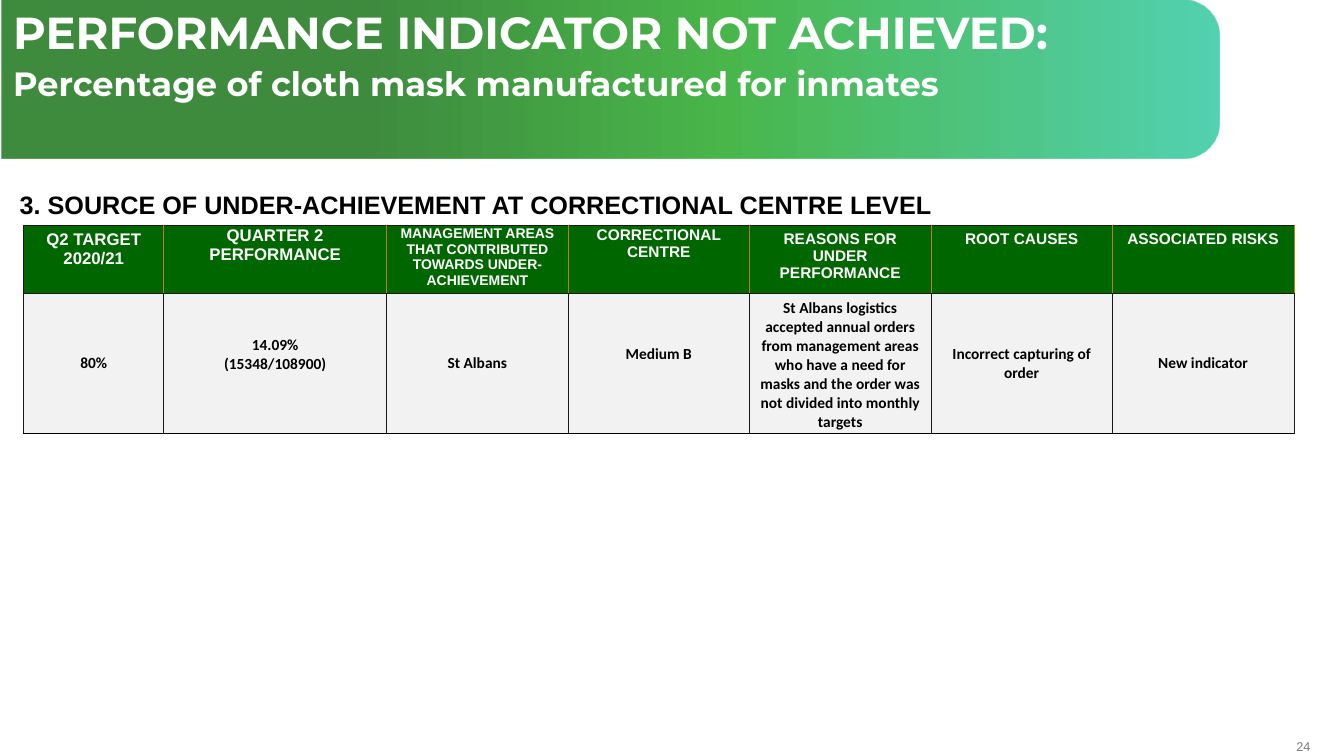
from dataclasses import dataclass

from lxml.etree import SubElement
from pptx import Presentation
from pptx.dml.color import RGBColor
from pptx.enum.shapes import MSO_SHAPE as Shape
from pptx.enum.text import MSO_ANCHOR as Anchor, MSO_AUTO_SIZE as AutoSize, PP_ALIGN as Align
from pptx.oxml.ns import qn
from pptx.util import Pt


@dataclass(frozen=True)
class Theme:
    title_font: str = "Montserrat"
    heading_font: str = "Arial"
    body_font: str = "Calibri"
    white: str = "FFFFFF"
    black: str = "000000"
    header_fill: str = "006600"
    body_fill: str = "F2F2F2"
    dark_border: str = "1E1918"
    accent_border: str = "BF7B17"
    page_number: str = "77787B"
    # position %, colour, opacity %
    band_stops: tuple = ((30, "006600", 75), (59, "009900", 71), (100, "00BC8D", 67))
    title_size: int = 32
    subtitle_size: int = 24
    heading_size: int = 18
    body_size: int = 11
    number_size: int = 9


THEME = Theme()

COLUMN_WIDTHS = [100, 159.2] + [129.6] * 5
ROW_HEIGHTS = [49, 100]
TIGHT = dict(margin_left=Pt(0.7), margin_top=Pt(0.7), margin_right=Pt(0.7), margin_bottom=0)
RAISED = dict(margin_bottom=Pt(17))

# text, type size, cell margins
HEADERS = [
    ("Q2 TARGET 2020/21", 12, {}),
    ("QUARTER 2\nPERFORMANCE", 12, TIGHT),
    ("MANAGEMENT AREAS THAT CONTRIBUTED TOWARDS UNDER-ACHIEVEMENT", 10, TIGHT),
    ("CORRECTIONAL CENTRE", 11, TIGHT),
    ("REASONS FOR UNDER\nPERFORMANCE", 11, {}),
    ("ROOT CAUSES", 11, {}),
    ("ASSOCIATED RISKS", 11, {}),
]
# text, cell margins
RESULTS = [
    ("80%", {}),
    ("14.09%\n(15348/108900)", RAISED),
    ("St Albans", {}),
    ("Medium B", RAISED),
    ("St Albans logistics accepted annual orders from management areas who have "
     "a need for masks and the order was not divided into monthly targets", {}),
    ("Incorrect capturing of order", {}),
    ("New indicator", {}),
]


def apply_format(target, values):
    for name, value in values.items():
        setattr(target, name, value)


def write_lines(frame, lines, font, color, sizes, bold=True, **paragraph_format):
    """Write one paragraph per line, each with its own type size."""
    for index, (line, size) in enumerate(zip(lines, sizes)):
        paragraph = frame.add_paragraph() if index else frame.paragraphs[0]
        apply_format(paragraph, paragraph_format)
        run = paragraph.add_run()
        run.text = line
        apply_format(run.font, dict(name=font, size=Pt(size), bold=bold))
        run.font.color.rgb = RGBColor.from_string(color)


def add_band(slide, left, top, length, depth):
    """Upright tab turned by 90 degrees, so its round corners face right."""
    offset = (length - depth) / 2
    band = slide.shapes.add_shape(Shape.ROUND_2_SAME_RECTANGLE, Pt(left + offset),
                                  Pt(top - offset), Pt(depth), Pt(length))
    band.rotation = 90
    band.adjustments[0] = 0.233
    band.adjustments[1] = 0
    band.shadow.inherit = False
    band.line.fill.background()
    band.fill.gradient()
    band.fill.gradient_angle = 90
    stops = band.element.spPr.find(".//" + qn("a:gsLst"))
    for stop in list(stops):
        stops.remove(stop)
    for position, color, opacity in THEME.band_stops:
        stop = SubElement(stops, qn("a:gs"), pos=str(position * 1000))
        color_element = SubElement(stop, qn("a:srgbClr"), val=color)
        SubElement(color_element, qn("a:alpha"), val=str(opacity * 1000))


def add_title(slide, title, subtitle):
    shape = slide.shapes.title
    apply_format(shape, dict(left=Pt(2.2), top=Pt(4.3), width=Pt(862.6), height=Pt(41)))
    frame = shape.text_frame
    apply_format(frame, dict(word_wrap=True, auto_size=AutoSize.NONE,
                             vertical_anchor=Anchor.TOP))
    write_lines(frame, [title, subtitle], THEME.title_font, THEME.white,
                [THEME.title_size, THEME.subtitle_size], alignment=Align.LEFT,
                line_spacing=0.9, space_after=Pt(6))


def add_text(slide, text, box, size, color, bold, align, frame_format):
    frame = slide.shapes.add_textbox(*map(Pt, box)).text_frame
    apply_format(frame, dict(word_wrap=True, **frame_format))
    write_lines(frame, [text], THEME.heading_font, color, [size], bold, alignment=align)


def set_borders(cell, borders):
    """Borders map a side (L, R, T, B) to its colour and width in points."""
    properties = cell._tc.get_or_add_tcPr()
    for side, (color, width) in borders.items():
        line = SubElement(properties, qn("a:ln" + side), w=str(Pt(width)))
        fill = SubElement(line, qn("a:solidFill"))
        SubElement(fill, qn("a:srgbClr"), val=color)


def fill_cell(cell, text, font, color, size, fill, cell_format, borders):
    set_borders(cell, borders)
    cell.fill.solid()
    cell.fill.fore_color.rgb = RGBColor.from_string(fill)
    apply_format(cell, cell_format)
    lines = text.split("\n")
    write_lines(cell.text_frame, lines, font, color, [size] * len(lines),
                alignment=Align.CENTER)


def add_results_table(slide, left, top):
    table = slide.shapes.add_table(2, len(COLUMN_WIDTHS), Pt(left), Pt(top),
                                   Pt(sum(COLUMN_WIDTHS)), Pt(sum(ROW_HEIGHTS))).table
    apply_format(table, dict(first_row=False, horz_banding=False))
    for column, width in zip(table.columns, COLUMN_WIDTHS):
        column.width = Pt(width)
    for row, height in zip(table.rows, ROW_HEIGHTS):
        row.height = Pt(height)

    dark, accent = (THEME.dark_border, 0.5), (THEME.accent_border, 0.5)
    for index, (text, size, margins) in enumerate(HEADERS):
        borders = dict(L=accent if index else dark, R=accent, T=dark, B=dark)
        fill_cell(table.cell(0, index), text, THEME.heading_font, THEME.white, size,
                  THEME.header_fill, margins, borders)
    borders = dict(L=dark, R=dark, T=dark, B=(THEME.black, 1))
    for index, (text, margins) in enumerate(RESULTS):
        fill_cell(table.cell(1, index), text, THEME.body_font, THEME.black,
                  THEME.body_size, THEME.body_fill,
                  dict(vertical_anchor=Anchor.MIDDLE, **margins), borders)


def main():
    presentation = Presentation()
    apply_format(presentation, dict(slide_width=Pt(960), slide_height=Pt(540)))
    slide = presentation.slides.add_slide(presentation.slide_layouts[5])

    # Title band, moved behind the title text
    add_band(slide, left=1.1, top=0, length=869.8, depth=113)
    title_element = slide.shapes.title.element
    title_element.getparent().append(title_element)
    add_title(slide, "PERFORMANCE INDICATOR NOT ACHIEVED:",
              "Percentage of cloth mask manufactured for inmates")

    # Section heading and table
    add_text(slide, "3. SOURCE OF UNDER-ACHIEVEMENT AT CORRECTIONAL CENTRE LEVEL",
             (7, 131.8, 695, 29), THEME.heading_size, THEME.black, True, Align.LEFT, {})
    add_results_table(slide, left=17, top=160.8)

    # Page number
    no_margins = dict.fromkeys(
        ["margin_left", "margin_top", "margin_right", "margin_bottom"], 0)
    add_text(slide, "24", (908, 528, 28, 11), THEME.number_size, THEME.page_number, False,
             Align.RIGHT, dict(vertical_anchor=Anchor.MIDDLE, **no_margins))

    presentation.save("out.pptx")


if __name__ == "__main__":
    main()
